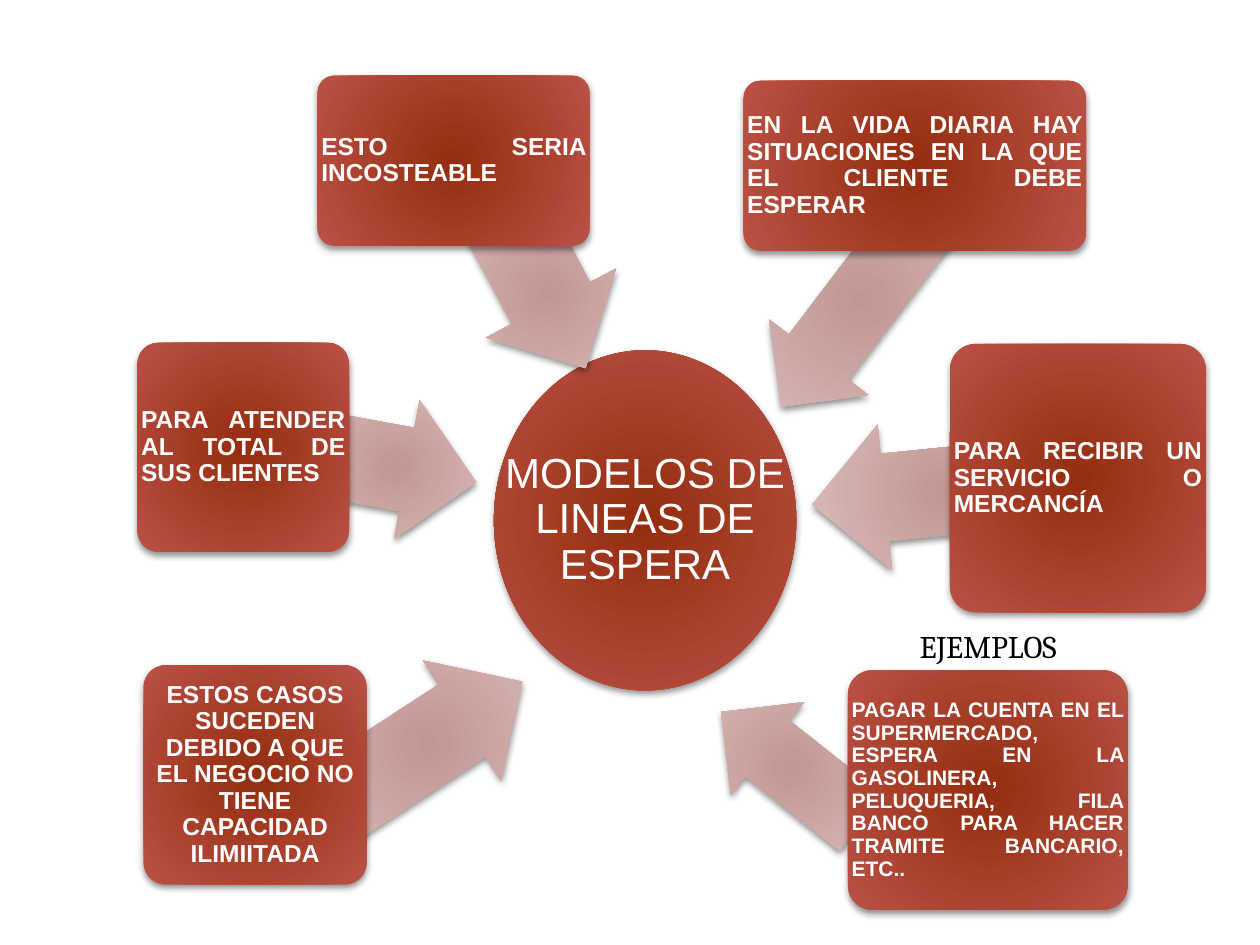
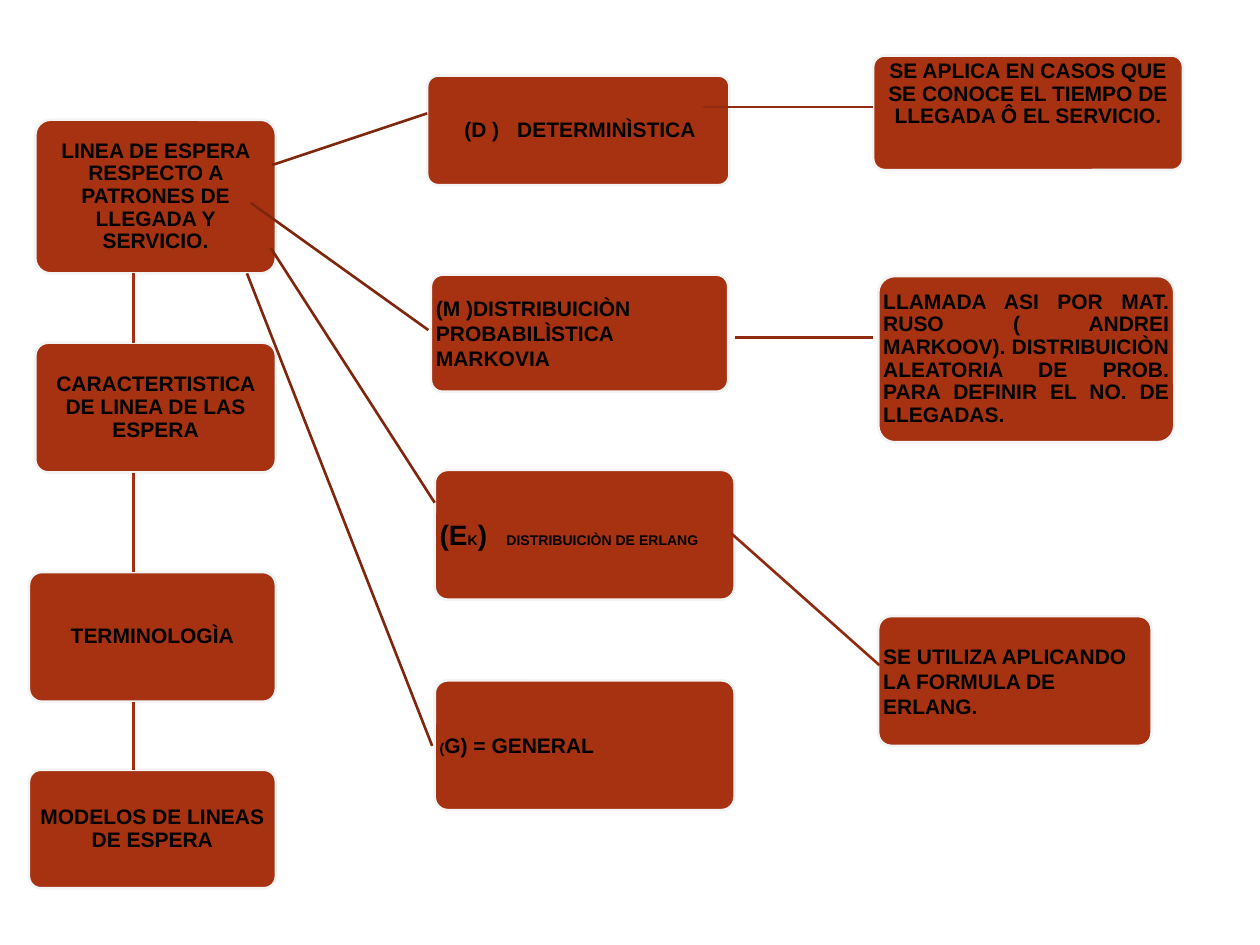
import pptx
import pptx.dml.color
import pptx.enum.shapes
import pptx.enum.text
import pptx.oxml.ns
import pptx.util
from lxml import etree

Inches = pptx.util.Inches
Pt = pptx.util.Pt
RGBColor = pptx.dml.color.RGBColor
SHAPE = pptx.enum.shapes.MSO_SHAPE
ALIGN = pptx.enum.text.PP_ALIGN
ANCHOR = pptx.enum.text.MSO_ANCHOR
qn = pptx.oxml.ns.qn

WHITE = RGBColor(0xFF, 0xFF, 0xFF)
BLACK = RGBColor(0x00, 0x00, 0x00)
RUST = RGBColor(0xA6, 0x32, 0x12)
BOX_EDGE = RGBColor(0xF4, 0xF4, 0xF4)
BRANCH_LINE = RGBColor(0x7F, 0x26, 0x0D)
DETAIL_LINE = RGBColor(0x90, 0x2B, 0x0F)
CHAIN_LINE = RGBColor(0x9F, 0x30, 0x11)
NODE_GRADIENT = (RGBColor(0x95, 0x2D, 0x10), RGBColor(0xBA, 0x51, 0x45))
ARROW_GRADIENT = (RGBColor(0xC2, 0x96, 0x93), RGBColor(0xDB, 0xBE, 0xBC))

CORNER = 0.1
CORNER_INSET = 0.0293
BOX_MARGIN = 0.04

CAUSES = [
    ((1.14, 5.28, 1.77, 1.74), (2.49, 5.33, 1.8, 1.14), 147, ALIGN.CENTER, 14,
     "ESTOS CASOS SUCEDEN DEBIDO A QUE EL NEGOCIO NO TIENE CAPACIDAD ILIMIITADA"),
    ((1.09, 2.72, 1.68, 1.66), (2.49, 3.15, 1.3, 1.12), 190.4, ALIGN.JUSTIFY, 14,
     "PARA ATENDER AL TOTAL DE SUS CLIENTES"),
    ((2.52, 0.6, 2.16, 1.35), (3.67, 1.75, 1.33, 1.17), 242, ALIGN.JUSTIFY, 14,
     "ESTO SERIA INCOSTEABLE"),
    ((5.9, 0.64, 2.72, 1.35), (5.78, 1.89, 2.12, 0.99), 307.2, ALIGN.JUSTIFY, 14,
     "EN LA VIDA DIARIA HAY SITUACIONES EN LA QUE EL CLIENTE DEBE ESPERAR"),
    ((7.54, 2.73, 2.03, 2.13), (6.44, 3.32, 2.12, 1.16), 354.3, ALIGN.JUSTIFY, 14,
     "PARA RECIBIR UN SERVICIO O MERCANCÍA"),
    ((6.73, 5.32, 2.22, 1.9), (5.57, 5.62, 1.42, 0.94), 38.3, ALIGN.JUSTIFY, 12,
     "PAGAR LA CUENTA EN EL SUPERMERCADO, ESPERA EN LA GASOLINERA, PELUQUERIA, "
     "FILA BANCO PARA HACER TRAMITE BANCARIO, ETC.."),
]

CHAIN = [
    ((0.28, 0.95, 1.91, 1.22), "LINEA DE ESPERA RESPECTO A PATRONES DE LLEGADA Y SERVICIO."),
    ((0.28, 2.72, 1.91, 1.03), "CARACTERTISTICA DE LINEA DE LAS ESPERA"),
    ((0.23, 4.54, 1.96, 1.03), "TERMINOLOGÌA"),
    ((0.23, 6.11, 1.96, 0.94), "MODELOS DE LINEAS DE ESPERA"),
]
CHAIN_X = 1.06

BRANCHES = [
    ((2.16, 1.31), (3.39, 0.9)),
    ((1.99, 1.61), (3.4, 2.62)),
    ((2.15, 1.97), (3.45, 3.99)),
    ((1.96, 2.17), (3.43, 5.92)),
]
DETAILS = [
    ((5.58, 0.85), (6.93, 0.85)),
    ((5.83, 2.68), (6.93, 2.68)),
    ((5.8, 4.23), (6.98, 5.28)),
]


def inches(place):
    return [Inches(length) for length in place]


def format_runs(paragraph, size, color, bold=True, font="Arial"):
    for run in paragraph.runs:
        run.font.name = font
        run.font.size = Pt(size)
        run.font.bold = bold
        run.font.color.rgb = color


def set_margins(frame, margin):
    frame.margin_left = frame.margin_right = Inches(margin)
    frame.margin_top = frame.margin_bottom = Inches(margin)


def add_glowing_shape(slide, kind, place, gradient):
    shape = slide.shapes.add_shape(kind, *inches(place))
    shape.line.fill.background()
    shape.fill.gradient()
    for position, (stop, color) in enumerate(zip(shape.fill.gradient_stops, gradient)):
        stop.color.rgb = color
        stop.position = position
    properties = shape.fill._xPr
    grad_fill = properties.find(qn("a:gradFill"))
    grad_fill.remove(grad_fill.find(qn("a:lin")))
    circle = etree.SubElement(grad_fill, qn("a:path"), path="circle")
    etree.SubElement(circle, qn("a:fillToRect"), l="40000", t="100000", r="40000", b="100000")
    shape.shadow.inherit = False
    shadow = etree.SubElement(properties.find(qn("a:effectLst")), qn("a:outerShdw"),
                              blurRad=str(Pt(4)), dist=str(Pt(2)), dir="5040000", rotWithShape="0")
    shade = etree.SubElement(shadow, qn("a:srgbClr"), val=str(BLACK))
    etree.SubElement(shade, qn("a:alpha"), val="44000")
    return shape


def add_label(slide, place, text, size, align, margin, bold):
    frame = slide.shapes.add_textbox(*inches(place)).text_frame
    frame.word_wrap = True
    frame.vertical_anchor = ANCHOR.MIDDLE
    set_margins(frame, margin)
    frame.text = text
    paragraph = frame.paragraphs[0]
    paragraph.alignment = align
    paragraph.line_spacing = 0.9
    format_runs(paragraph, size, WHITE, bold)


def add_cause(slide, place, arrow_place, angle, align, size, text):
    arrow = add_glowing_shape(slide, SHAPE.LEFT_ARROW, arrow_place, ARROW_GRADIENT)
    arrow.adjustments[0] = 0.6
    arrow.adjustments[1] = 0.5
    arrow.rotation = angle
    card = add_glowing_shape(slide, SHAPE.ROUNDED_RECTANGLE, place, NODE_GRADIENT)
    card.adjustments[0] = CORNER
    add_label(slide, place, text, size, align, 0.03, True)


def add_box(slide, place, text, align=ALIGN.LEFT, spacing=1.0, anchor=ANCHOR.MIDDLE):
    box = slide.shapes.add_shape(SHAPE.ROUNDED_RECTANGLE, *inches(place))
    box.adjustments[0] = CORNER
    box.shadow.inherit = False
    box.fill.solid()
    box.fill.fore_color.rgb = RUST
    box.line.color.rgb = BOX_EDGE
    box.line.width = Pt(1.5)
    frame = box.text_frame
    frame.word_wrap = True
    frame.vertical_anchor = anchor
    set_margins(frame, BOX_MARGIN - CORNER_INSET * min(place[2:]))
    frame.text = text
    paragraph = frame.paragraphs[0]
    paragraph.alignment = align
    paragraph.line_spacing = spacing
    format_runs(paragraph, 12, BLACK)
    return frame


def add_tab_stop(paragraph, position):
    tabs = etree.SubElement(paragraph._p.get_or_add_pPr(), qn("a:tabLst"))
    etree.SubElement(tabs, qn("a:tab"), pos=str(Inches(position)), algn="l")


def add_sized_runs(paragraph, pieces):
    paragraph.clear()
    for text, size in pieces:
        run = paragraph.add_run()
        run.text = text
    format_runs(paragraph, 12, BLACK)
    for run, (text, size) in zip(paragraph.runs, pieces):
        run.font.size = Pt(size)


def add_link(slide, start, end, color):
    link = slide.shapes.add_connector(pptx.enum.shapes.MSO_CONNECTOR.STRAIGHT,
                                      *inches(start + end))
    link.line.color.rgb = color
    link.line.width = Pt(1.5)
    etree.SubElement(link._element.spPr, qn("a:effectLst"))


def build_causes(slide):
    center = (3.92, 2.78, 2.4, 2.7)
    add_glowing_shape(slide, SHAPE.OVAL, center, NODE_GRADIENT)
    add_label(slide, center, "MODELOS DE LINEAS DE ESPERA", 24, ALIGN.CENTER, 0.02, False)
    for cause in CAUSES:
        add_cause(slide, *cause)
    examples = slide.shapes.add_textbox(*inches((7.2, 4.93, 2.13, 0.4))).text_frame
    examples.word_wrap = True
    examples.text = "EJEMPLOS"
    format_runs(examples.paragraphs[0], 18, BLACK, False, "Cambria")


def build_patterns(slide):
    for place, text in CHAIN:
        add_box(slide, place, text, ALIGN.CENTER, 0.9)

    deterministic = add_box(slide, (3.39, 0.6, 2.4, 0.87), "(D )\tDETERMINÌSTICA", spacing=0.9)
    deterministic.margin_left = Inches(0.27)
    add_tab_stop(deterministic.paragraphs[0], 0.42)
    add_box(slide, (3.42, 2.18, 2.36, 0.93), "(M )DISTRIBUICIÒN PROBABILÌSTICA MARKOVIA")
    erlang = add_box(slide, (3.45, 3.73, 2.38, 1.03), "").paragraphs[0]
    add_tab_stop(erlang, 0.53)
    add_sized_runs(erlang, [("(E", 16), ("K", 8), (")", 16), ("\tDISTRIBUICIÒN DE ERLANG", 8)])
    general = add_box(slide, (3.45, 5.4, 2.38, 1.03), "").paragraphs[0]
    add_sized_runs(general, [("(", 8), ("G) = GENERAL", 12)])

    add_box(slide, (6.93, 0.44, 2.46, 0.91),
            "SE APLICA EN CASOS QUE SE CONOCE EL TIEMPO DE LLEGADA Ô EL SERVICIO.",
            ALIGN.CENTER, 0.9, ANCHOR.TOP)
    add_box(slide, (6.97, 2.19, 2.35, 1.32),
            "LLAMADA ASI POR MAT. RUSO ( ANDREI MARKOOV). DISTRIBUICIÒN ALEATORIA "
            "DE PROB. PARA DEFINIR EL NO. DE LLEGADAS.", ALIGN.JUSTIFY, 0.9)
    add_box(slide, (6.97, 4.89, 2.17, 1.03), "SE UTILIZA APLICANDO LA FORMULA DE ERLANG.")

    for start, end in BRANCHES:
        add_link(slide, start, end, BRANCH_LINE)
    for start, end in DETAILS:
        add_link(slide, start, end, DETAIL_LINE)
    for (upper, _), (lower, _) in zip(CHAIN, CHAIN[1:]):
        add_link(slide, (CHAIN_X, upper[1] + upper[3]), (CHAIN_X, lower[1]), CHAIN_LINE)


def main():
    deck = pptx.Presentation()
    deck.slide_width = Inches(10)
    deck.slide_height = Inches(7.5)
    blank = deck.slide_layouts[6]
    for build in (build_causes, build_patterns):
        build(deck.slides.add_slide(blank))
    deck.save("out.pptx")


if __name__ == "__main__":
    main()
